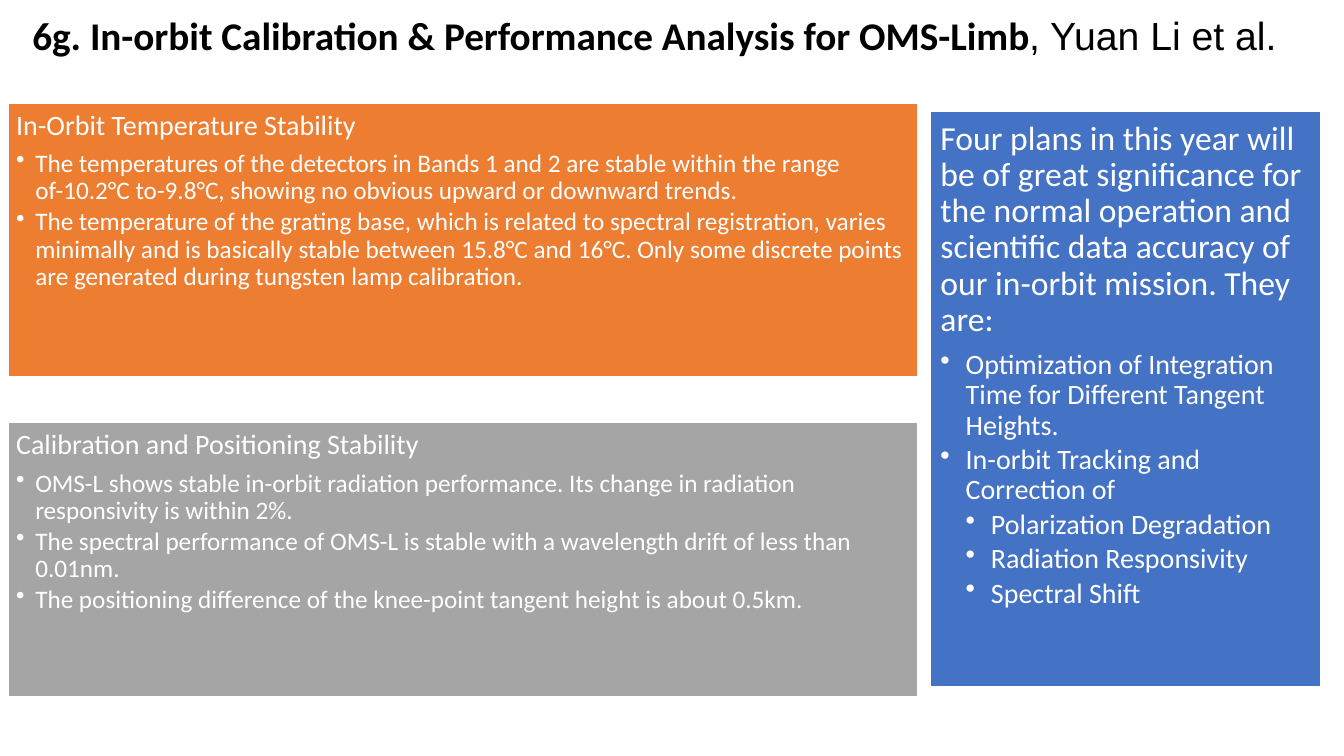
"""Build the OMS-Limb in-orbit calibration slide: a title and three text panels."""
from pptx import Presentation
from pptx.dml.color import RGBColor
from pptx.enum import shapes, text
from pptx.oxml import parse_xml
from pptx.oxml.ns import nsdecls
from pptx.util import Inches, Pt


def rgb(hex_code):
    return RGBColor.from_string(hex_code)


def write(paragraph, words, size, color="FFFFFF", font="Calibri", bold=False,
          level=0, indent=0, after=0):
    run = paragraph.add_run()
    run.text = words
    run.font.size = Pt(size)
    run.font.name = font
    run.font.bold = bold
    run.font.color.rgb = rgb(color)
    paragraph.alignment = text.PP_ALIGN.LEFT
    paragraph.line_spacing = 0.9
    paragraph.space_before = Pt(0)
    paragraph.space_after = Pt(after)
    paragraph.level = level
    if level:
        properties = paragraph._p.get_or_add_pPr()
        properties.set("marL", str(Inches(indent * level)))
        properties.set("indent", str(-Inches(indent)))
        properties.append(parse_xml(f'<a:buChar {nsdecls("a")} char="•"/>'))


deck = Presentation()
deck.slide_width, deck.slide_height = Inches(13.33), Inches(7.5)
slide = deck.slides.add_slide(deck.slide_layouts[5])

title = slide.shapes.title
title.left, title.top = Inches(0.22), Inches(0.02)
title.width, title.height = Inches(13.12), Inches(0.71)
title.text_frame.vertical_anchor = text.MSO_ANCHOR.MIDDLE
title.text_frame.auto_size = text.MSO_AUTO_SIZE.NONE
heading = title.text_frame.paragraphs[0]
write(heading, "6g. In-orbit Calibration & Performance Analysis for OMS-Limb", 28,
      color="000000", bold=True)
write(heading, ", Yuan Li et al.", 28, color="000000", font="Arial")

plans = [
    (1, "Optimization of Integration Time for Different Tangent Heights."),
    (1, "In-orbit Tracking and Correction of"),
    (2, "Polarization Degradation"),
    (2, "Radiation Responsivity"),
    (2, "Spectral Shift"),
]
temperature = [
    (1, "The temperatures of the detectors in Bands 1 and 2 are stable within the range "
        "of-10.2°C to-9.8°C, showing no obvious upward or downward trends."),
    (1, "The temperature of the grating base, which is related to spectral registration, "
        "varies minimally and is basically stable between 15.8°C and 16°C. Only some "
        "discrete points are generated during tungsten lamp calibration."),
]
calibration = [
    (1, "OMS-L shows stable in-orbit radiation performance. Its change in radiation "
        "responsivity is within 2%."),
    (1, "The spectral performance of OMS-L is stable with a wavelength drift of less "
        "than 0.01nm."),
    (1, "The positioning difference of the knee-point tangent height is about 0.5km."),
]
panels = [
    ((9.23, 1.1, 3.87, 5.71), "4472C4", 0.1, 24, 20, 0.25,
     "Four plans in this year will be of great significance for the normal operation and "
     "scientific data accuracy of our in-orbit mission. They are:", plans),
    ((0.08, 1.02, 9.02, 2.72), "ED7D31", 0.08, 20, 18, 0.19,
     "In-Orbit Temperature Stability", temperature),
    ((0.08, 4.19, 9.02, 2.72), "A5A5A5", 0.08, 20, 18, 0.19,
     "Calibration and Positioning Stability", calibration),
]

for place, fill, inset, lead_size, point_size, indent, lead, points in panels:
    panel = slide.shapes.add_shape(shapes.MSO_SHAPE.RECTANGLE, *map(Inches, place))
    panel.shadow.inherit = False
    panel.fill.solid()
    panel.fill.fore_color.rgb = rgb(fill)
    panel.line.color.rgb = rgb("FFFFFF")
    panel.line.width = Pt(1)
    frame = panel.text_frame
    frame.word_wrap = True
    frame.vertical_anchor = text.MSO_ANCHOR.TOP
    frame.margin_left = frame.margin_right = Inches(inset)
    frame.margin_top = frame.margin_bottom = Inches(inset)
    write(frame.paragraphs[0], lead, lead_size, after=lead_size * 0.35)
    for level, point in points:
        write(frame.add_paragraph(), point, point_size, level=level, indent=indent,
              after=point_size * 0.15)

deck.save("out.pptx")
